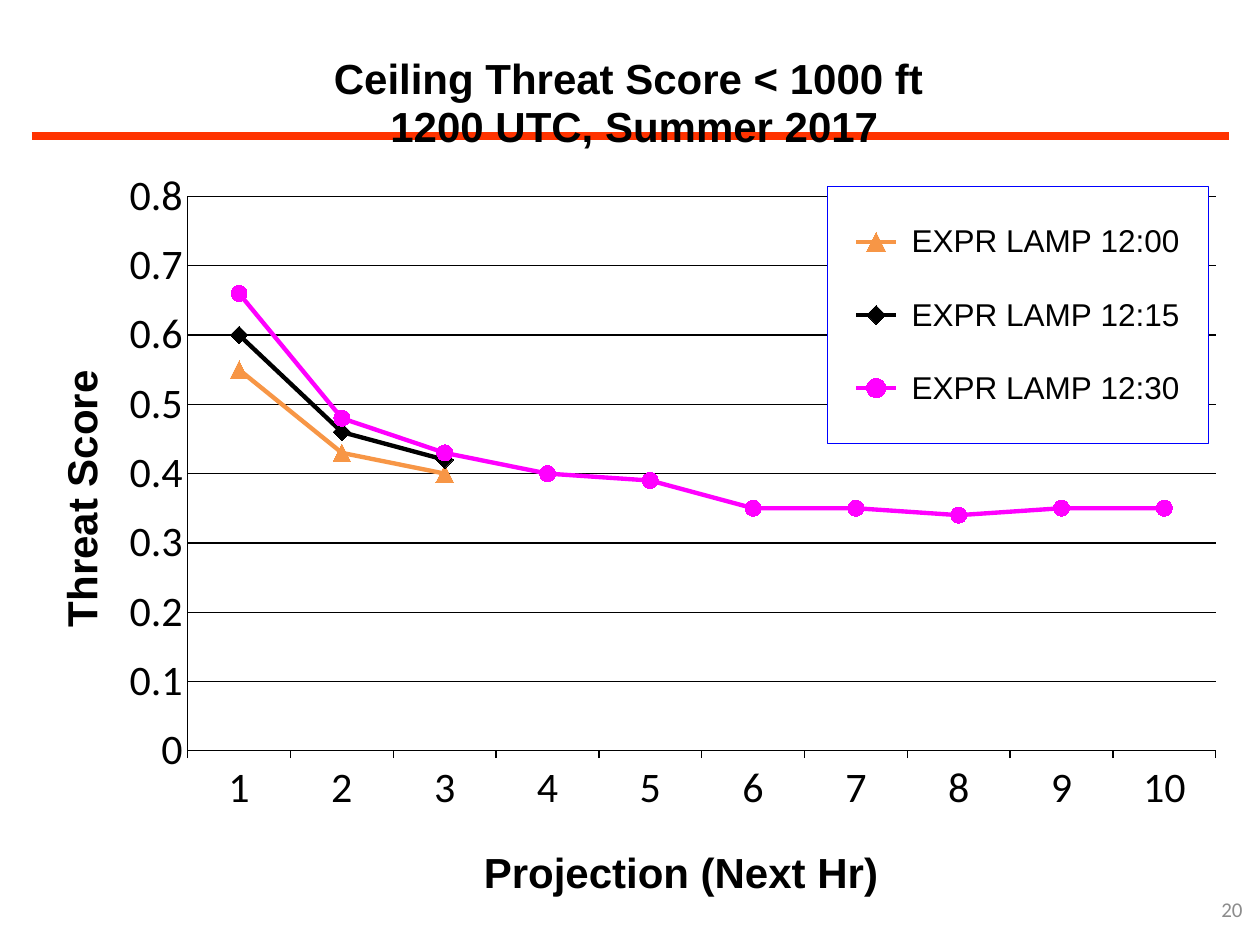
import pptx
import pptx.chart.data
import pptx.dml.color
import pptx.enum.chart
import pptx.enum.text
import pptx.oxml
import pptx.oxml.ns
import pptx.util
from pptx.util import Inches

LEFT, TOP, WIDE, HIGH = 0.08, 0.17, 9.76, 7.08
MARK = pptx.enum.chart.XL_MARKER_STYLE
TICK = pptx.enum.chart.XL_TICK_MARK
SERIES = [
    (" EXPR LAMP 12:00", "F79646", MARK.TRIANGLE, 10, [0.55, 0.43, 0.4]),
    (" EXPR LAMP 12:15", "000000", MARK.DIAMOND, 10, [0.6, 0.46, 0.42]),
    (" EXPR LAMP 12:30", "FF00FF", MARK.CIRCLE, 9,
     [0.66, 0.48, 0.43, 0.4, 0.39, 0.35, 0.35, 0.34, 0.35, 0.35]),
]


def paint(color, code):
    color.rgb = pptx.dml.color.RGBColor.from_string(code)


def style(font, name, size, code="000000", bold=False):
    font.name = name
    font.size = pptx.util.Pt(size)
    font.bold = bold
    paint(font.color, code)


def stroke(line, code, width):
    paint(line.color, code)
    line.width = pptx.util.Pt(width)


def make(tag, inner=""):
    spaces = pptx.oxml.ns.nsdecls("c", "a")
    return pptx.oxml.parse_xml(f"<{tag} {spaces}>{inner}</{tag}>")


def place(node, index, left, top, size=None, inner=False):
    for old in node.findall(pptx.oxml.ns.qn("c:layout")):
        node.remove(old)
    parts = [("xMode", "edge"), ("yMode", "edge"),
             ("x", (left - LEFT) / WIDE), ("y", (top - TOP) / HIGH)]
    if inner:
        parts.insert(0, ("layoutTarget", "inner"))
    if size:
        parts += [("w", size[0] / WIDE), ("h", size[1] / HIGH)]
    text = "".join(f'<c:{key} val="{val}"/>' for key, val in parts)
    node.insert(index, make("c:layout", f"<c:manualLayout>{text}</c:manualLayout>"))


def add_title(title, text, left, top, turn=0):
    frame = title.text_frame
    frame.text = text
    frame._txBody.bodyPr.set("rot", str(turn * 60000))
    for para in frame.paragraphs:
        para.alignment = pptx.enum.text.PP_ALIGN.CENTER
        for run in para.runs:
            style(run.font, "Arial", 24, bold=True)
    place(title._element, 1, left, top)


def set_axis(axis, tick):
    axis.major_tick_mark = tick
    axis.minor_tick_mark = TICK.NONE
    style(axis.tick_labels.font, "Calibri", 24)
    stroke(axis.format.line, "000000", 0.75)


def add_legend(chart):
    chart.has_legend = True
    legend = chart.legend
    legend.position = pptx.enum.chart.XL_LEGEND_POSITION.RIGHT
    legend.include_in_layout = False
    style(legend.font, "Arial", 18)
    node = legend._element
    place(node, 1, 6.57, 1.48, (3.02, 2.04))
    fill = '<a:solidFill><a:srgbClr val="{}"/></a:solidFill>'
    look = fill.format("FFFFFF") + f'<a:ln w="9525">{fill.format("0000FF")}</a:ln>'
    node.find(pptx.oxml.ns.qn("c:overlay")).addnext(make("c:spPr", look))


def add_chart(slide):
    data = pptx.chart.data.CategoryChartData()
    data.categories = [str(hour) for hour in range(1, 11)]
    for name, _, _, _, vals in SERIES:
        data.add_series(name, vals)
    kind = pptx.enum.chart.XL_CHART_TYPE.LINE_MARKERS
    box = [Inches(side) for side in (LEFT, TOP, WIDE, HIGH)]
    chart = slide.shapes.add_chart(kind, *box, data).chart
    style(chart.font, "Calibri", 10)
    plot = chart.plots[0]
    plot.vary_by_categories = False
    for line, (_, code, mark, size, _) in zip(plot.series, SERIES):
        line.smooth = False
        stroke(line.format.line, code, 2.5)
        line.marker.style = mark
        line.marker.size = size
        line.marker.format.fill.solid()
        paint(line.marker.format.fill.fore_color, code)
        stroke(line.marker.format.line, code, 0.75)
    hours, score = chart.category_axis, chart.value_axis
    set_axis(hours, TICK.OUTSIDE)
    set_axis(score, TICK.NONE)
    score.minimum_scale, score.maximum_scale, score.major_unit = 0, 0.8, 0.1
    stroke(score.major_gridlines.format.line, "000000", 0.75)
    add_title(chart.chart_title, "Ceiling Threat Score < 1000 ft\n 1200 UTC, Summer 2017",
              2.62, 0.4)
    add_title(hours.axis_title, "Projection (Next Hr)", 3.78, 6.65)
    add_title(score.axis_title, "Threat Score", 0.37, 2.88, -90)
    add_legend(chart)
    place(plot._element.getparent(), 0, 1.49, 1.56, (8.16, 4.4), True)


def add_rule(slide):
    kind = pptx.enum.shapes.MSO_CONNECTOR.STRAIGHT
    ends = [Inches(side) for side in (0.25, 1.08, 9.75, 1.08)]
    rule = slide.shapes.add_connector(kind, *ends)
    stroke(rule.line, "FF3300", 4.5)
    rule._element.spPr.append(make("a:effectLst"))


def add_number(slide, text):
    box = [Inches(side) for side in (9.36, 6.93, 0.6, 0.57)]
    frame = slide.shapes.add_textbox(*box).text_frame
    frame.text = text
    frame.word_wrap = True
    frame.vertical_anchor = pptx.enum.text.MSO_ANCHOR.MIDDLE
    frame.margin_left = frame.margin_right = Inches(0.1)
    frame.margin_top = frame.margin_bottom = Inches(0.1)
    para = frame.paragraphs[0]
    para.alignment = pptx.enum.text.PP_ALIGN.RIGHT
    style(para.runs[0].font, "Calibri", 12, "8C8C8C")


def main():
    deck = pptx.Presentation()
    deck.slide_width, deck.slide_height = Inches(10), Inches(7.5)
    slide = deck.slides.add_slide(deck.slide_layouts[6])
    add_rule(slide)
    add_number(slide, "20")
    add_chart(slide)
    deck.save("out.pptx")


if __name__ == "__main__":
    main()
